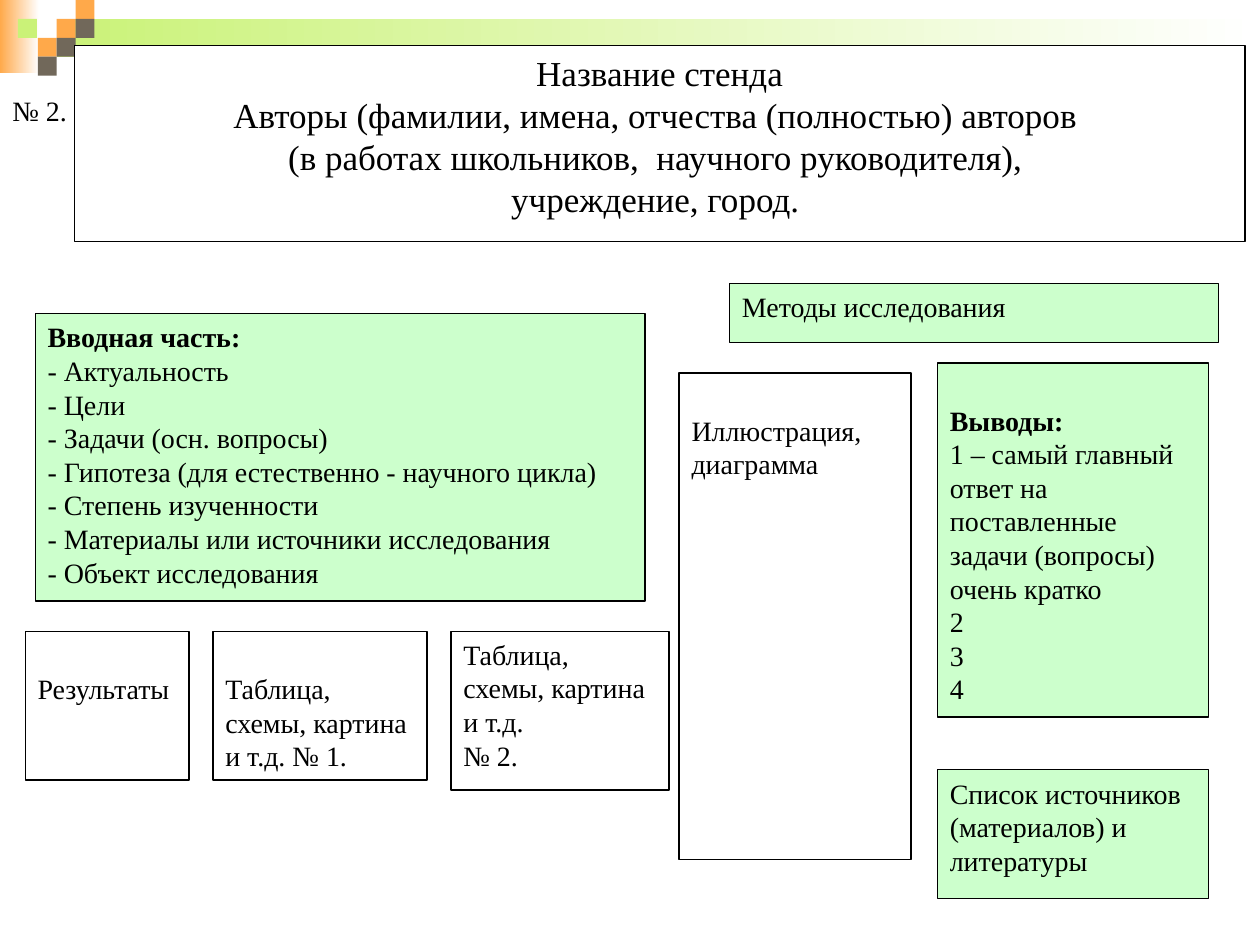
from dataclasses import dataclass
from pptx import Presentation
from pptx.dml.color import RGBColor
from pptx.enum.shapes import MSO_SHAPE
from pptx.enum.text import MSO_ANCHOR, PP_ALIGN
from pptx.util import Inches, Pt

ORANGE = RGBColor(0xFF, 0xA9, 0x4A)
LIME = RGBColor(0xCA, 0xF2, 0x78)
BROWN = RGBColor(0x71, 0x68, 0x5A)
MINT = RGBColor(0xCC, 0xFF, 0xCC)
WHITE = RGBColor(0xFF, 0xFF, 0xFF)
BLACK = RGBColor(0, 0, 0)
FONT = "Times New Roman"
INSET = 0.05
LINE_HEIGHT = 0.27  # one line of 16 pt text, in inches


@dataclass
class Panel:
    left: float
    top: float
    width: float
    height: float
    lines: list[str]
    fill: RGBColor = WHITE
    heading: bool = False  # first line is bold
    lowered: bool = False  # text starts one line down
    size: int = 16
    align: PP_ALIGN = PP_ALIGN.LEFT


def write_text(sp, lines: list[str], *, size: int = 16, heading: bool = False,
               lowered: bool = False, align: PP_ALIGN = PP_ALIGN.LEFT,
               anchor: MSO_ANCHOR = MSO_ANCHOR.TOP, wrap: bool = True) -> None:
    tf = sp.text_frame
    tf.word_wrap = wrap
    tf.vertical_anchor = anchor
    tf.margin_top = Inches(INSET + (LINE_HEIGHT if lowered else 0))
    for i, line in enumerate(lines):
        p = tf.add_paragraph() if i else tf.paragraphs[0]
        p.alignment = align
        r = p.add_run()
        r.text = line
        r.font.name = FONT
        r.font.size = Pt(size)
        r.font.bold = heading and i == 0
        r.font.color.rgb = BLACK


def add_rect(s, left: float, top: float, width: float, height: float,
             fill: RGBColor, fade: bool = False):
    sp = s.shapes.add_shape(MSO_SHAPE.RECTANGLE, Inches(left), Inches(top),
                            Inches(width), Inches(height))
    sp.shadow.inherit = False
    sp.line.fill.background()
    if fade:
        sp.fill.gradient()
        sp.fill.gradient_angle = 0
        for stop, color, position in zip(sp.fill.gradient_stops, (fill, WHITE), (0, 1)):
            stop.color.rgb = color
            stop.position = position
    else:
        sp.fill.solid()
        sp.fill.fore_color.rgb = fill
    return sp


def add_panel(s, panel: Panel) -> None:
    sp = add_rect(s, panel.left, panel.top, panel.width, panel.height, panel.fill)
    sp.line.color.rgb = BLACK
    sp.line.width = Pt(0.75)
    write_text(sp, panel.lines, size=panel.size, heading=panel.heading,
               lowered=panel.lowered, align=panel.align)


TILE = 0.15
# Column and row of each tile in the corner mosaic
TILES = [(3, 1, ORANGE), (4, 0, ORANGE), (4, 1, BROWN), (2, 2, ORANGE),
         (0.95, 1, LIME), (3, 2, BROWN), (2, 3, BROWN)]

PANELS = [
    Panel(0.59, 0.36, 9.29, 1.56, [
        "Название стенда",
        "Авторы (фамилии, имена, отчества (полностью) авторов ",
        "(в работах школьников,  научного руководителя), ",
        "учреждение, город. ",
    ], size=20, align=PP_ALIGN.CENTER),
    Panel(0.28, 2.49, 4.84, 2.28, [
        "Вводная часть:",
        "- Актуальность",
        "- Цели",
        "- Задачи (осн. вопросы)",
        "- Гипотеза (для естественно - научного цикла)",
        "- Степень изученности",
        "- Материалы или источники исследования",
        "- Объект исследования",
    ], MINT, heading=True),
    Panel(5.79, 2.25, 3.88, 0.47, ["Методы исследования"], MINT),
    Panel(7.44, 2.88, 2.15, 2.81, [
        "Выводы:",
        "1 – самый главный ответ на поставленные задачи (вопросы) очень кратко",
        "2", "3", "4",
    ], MINT, heading=True, lowered=True),
    Panel(7.44, 6.11, 2.15, 1.02,
          ["Список источников (материалов) и литературы"], MINT),
    Panel(5.39, 2.96, 1.84, 3.86, ["Иллюстрация, диаграмма"], lowered=True),
    Panel(0.2, 5.01, 1.3, 1.18, ["Результаты"], lowered=True),
    Panel(1.69, 5.01, 1.7, 1.18, ["Таблица, схемы, картина и т.д. № 1."], lowered=True),
    Panel(3.58, 5.01, 1.73, 1.26, ["Таблица, схемы, картина и т.д.", "№ 2."]),
]


def main() -> None:
    prs = Presentation()
    prs.slide_width, prs.slide_height = Inches(10), Inches(7.5)
    s = prs.slides.add_slide(prs.slide_layouts[6])

    # Header decoration
    add_rect(s, 0, 0, 0.31, 0.58, ORANGE, fade=True)
    add_rect(s, 0.45, 0.15, 9.55, 0.3, LIME, fade=True)
    for col, row, color in TILES:
        add_rect(s, col * TILE, row * TILE, TILE, TILE, color)

    # Poster sections
    for panel in PANELS:
        add_panel(s, panel)

    # Slide number label
    label = s.shapes.add_textbox(Inches(0), Inches(0.15), Inches(0.7), Inches(1.18))
    write_text(label, ["№ 2."], anchor=MSO_ANCHOR.MIDDLE, wrap=False, lowered=True)

    prs.save("out.pptx")


if __name__ == "__main__":
    main()
